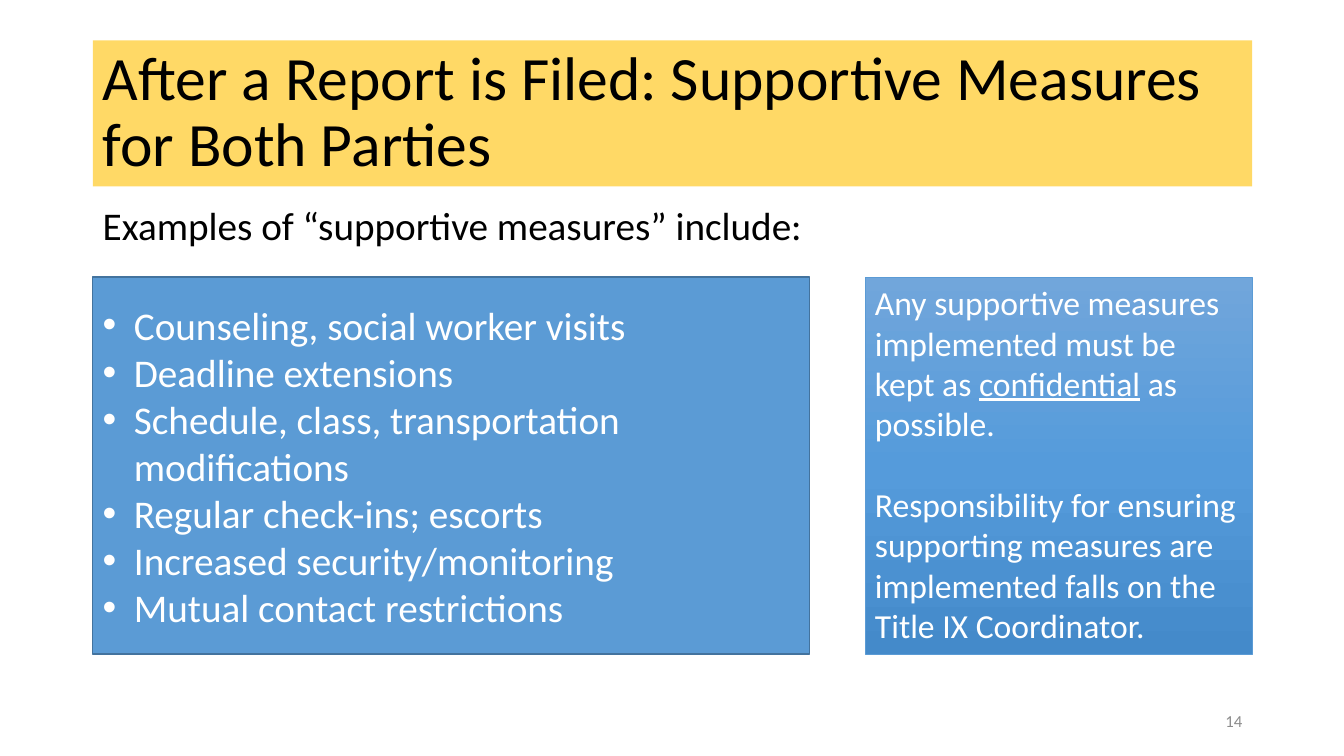
from copy import deepcopy
from lxml.etree import SubElement
from pptx import Presentation
from pptx.dml.color import RGBColor
from pptx.enum.shapes import MSO_SHAPE
from pptx.enum.text import MSO_ANCHOR, PP_ALIGN
from pptx.oxml.ns import qn
from pptx.util import Inches, Pt

COLORS = {
    "title": "FFD966", "panel": "5B9BD5", "panel_line": "43739E",
    "black": "000000", "white": "FFFFFF", "number": "8C8C8C",
}
GRADIENT = [(0, "71A6DB"), (0.5, "559BDB"), (1, "448ACA")]
LEFT, WIDTH = 0.92, 11.5
RIGHT = LEFT + WIDTH
PANEL_TOP, PANEL_HEIGHT = 2.75, 3.74
LIST_WIDTH, NOTE_WIDTH = 7.11, 3.84
NUMBER_WIDTH = 3

MEASURES = [
    "Counseling, social worker visits",
    "Deadline extensions",
    "Schedule, class, transportation modifications",
    "Regular check-ins; escorts",
    "Increased security/monitoring",
    "Mutual contact restrictions",
]
NOTES = [
    ["Any supportive measures implemented must be kept as ", "confidential", " as possible."],
    ["Responsibility for ensuring supporting measures are implemented falls on the Title IX Coordinator."],
]


def rgb(name):
    return RGBColor.from_string(COLORS[name])


def style(p, size, color, align=PP_ALIGN.LEFT):
    p.alignment = align
    for r in p.runs:
        r.font.name = "Calibri"
        r.font.size = Pt(size)
        r.font.color.rgb = rgb(color)


prs = Presentation()
prs.slide_width, prs.slide_height = Inches(13.33), Inches(7.5)
slide = prs.slides.add_slide(prs.slide_layouts[5])
shapes = slide.shapes

title = shapes.title
title.left, title.top = Inches(LEFT), Inches(0.4)
title.width, title.height = Inches(WIDTH), Inches(1.45)
title.fill.solid()
title.fill.fore_color.rgb = rgb("title")
tf = title.text_frame
tf.text = "After a Report is Filed: Supportive Measures for Both Parties"
tf.vertical_anchor = MSO_ANCHOR.MIDDLE
tf.paragraphs[0].line_spacing = 0.9
style(tf.paragraphs[0], 44, "black")

intro = shapes.add_textbox(Inches(LEFT), Inches(2), Inches(WIDTH), Inches(0.6))
tf = intro.text_frame
tf.word_wrap = True
tf.text = "Examples of “supportive measures” include:"
tf.paragraphs[0].line_spacing = 0.9
style(tf.paragraphs[0], 28, "black")

panels = []
for x, width, line, weight in [
    (LEFT, LIST_WIDTH, "panel_line", 1),
    (RIGHT - NOTE_WIDTH, NOTE_WIDTH, "panel", 0.5),
]:
    sp = shapes.add_shape(MSO_SHAPE.RECTANGLE, Inches(x), Inches(PANEL_TOP),
                          Inches(width), Inches(PANEL_HEIGHT))
    sp.shadow.inherit = False
    sp.line.color.rgb = rgb(line)
    sp.line.width = Pt(weight)
    sp.text_frame.word_wrap = True
    panels.append(sp)
measures, notes = panels

measures.fill.solid()
measures.fill.fore_color.rgb = rgb("panel")
tf = measures.text_frame
tf.vertical_anchor = MSO_ANCHOR.MIDDLE
tf.text = "\n".join(MEASURES)
for p in tf.paragraphs:
    style(p, 28, "white")
    pPr = p._p.get_or_add_pPr()
    pPr.set("marL", str(Inches(0.31)))
    pPr.set("indent", str(-Inches(0.31)))
    SubElement(pPr, qn("a:buFont"), typeface="Arial")
    SubElement(pPr, qn("a:buChar"), char="•")

notes.fill.gradient()
notes.fill.gradient_angle = 270
gsLst = notes._element.spPr.find(".//" + qn("a:gsLst"))
gsLst.append(deepcopy(gsLst[-1]))
for stop, (position, color) in zip(notes.fill.gradient_stops, GRADIENT):
    stop.position = position
    stop.color.rgb = RGBColor.from_string(color)
tf = notes.text_frame
tf.vertical_anchor = MSO_ANCHOR.TOP
for i, parts in enumerate(NOTES):
    p = tf.add_paragraph() if i else tf.paragraphs[0]
    for part in parts:
        r = p.add_run()
        r.text = part
        r.font.underline = part == "confidential"
    p.space_before = Pt(29 * i)
    style(p, 24, "white")

number = shapes.add_textbox(Inches(RIGHT - NUMBER_WIDTH), Inches(6.95),
                            Inches(NUMBER_WIDTH), Inches(0.4))
tf = number.text_frame
tf.word_wrap = True
tf.vertical_anchor = MSO_ANCHOR.MIDDLE
tf.text = "14"
style(tf.paragraphs[0], 12, "number", PP_ALIGN.RIGHT)

prs.save("out.pptx")
